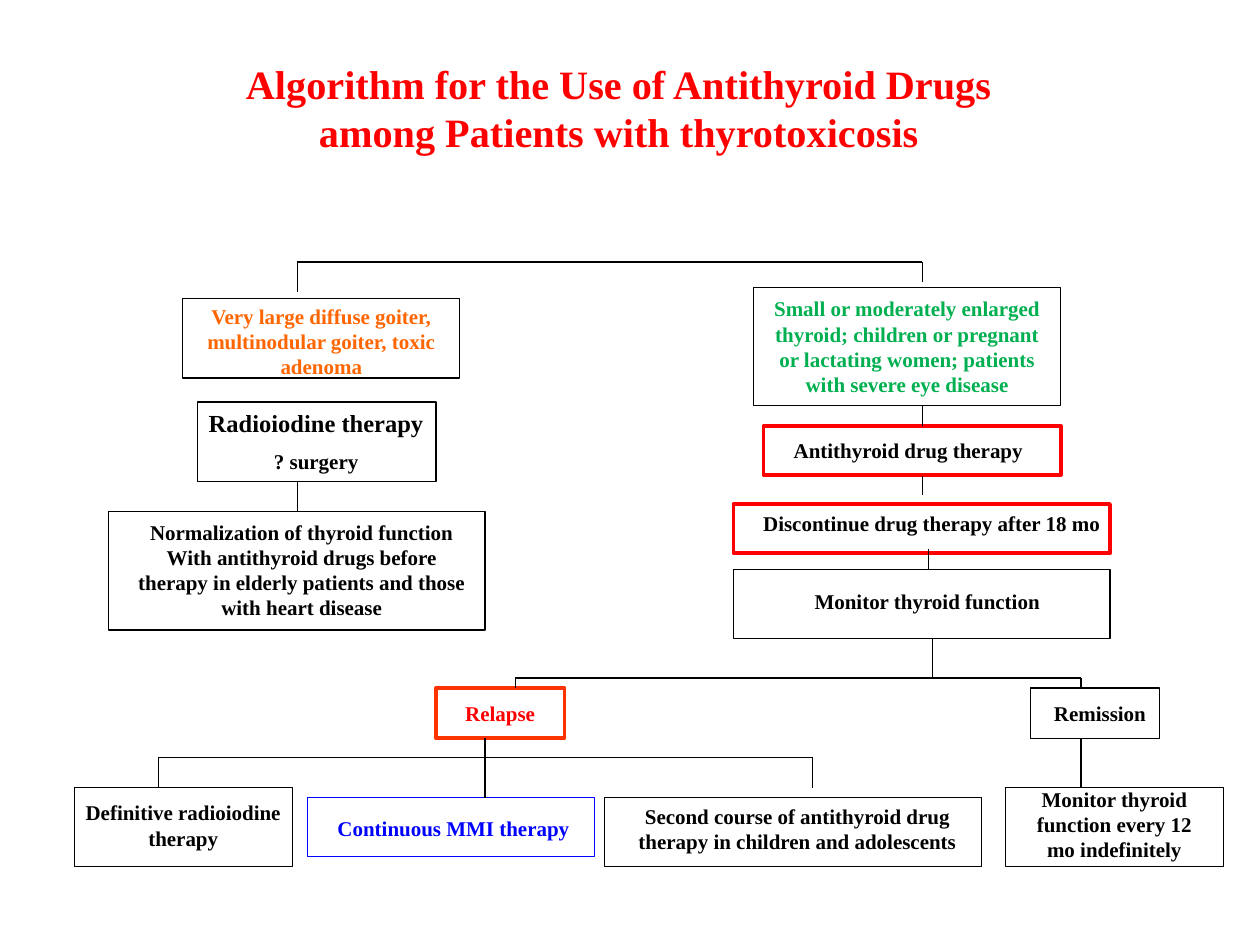
import pptx
import pptx.dml.color
import pptx.enum.shapes
import pptx.enum.text
import pptx.oxml.ns
import pptx.util
from lxml import etree

Inches = pptx.util.Inches
RGBColor = pptx.dml.color.RGBColor

FONT = "Times New Roman"
BLACK = RGBColor(0x00, 0x00, 0x00)
RED = RGBColor(0xFF, 0x00, 0x00)
ORANGE = RGBColor(0xFF, 0x66, 0x00)
RELAPSE_BORDER = RGBColor(0xFF, 0x33, 0x00)
GREEN = RGBColor(0x00, 0xB0, 0x50)
BLUE = RGBColor(0x00, 0x00, 0xFF)

# Connector x positions
LEFT_BRANCH = 2.36
RIGHT_BRANCH = 7.32
RELAPSE_DROP = 3.85
REMISSION_X = 8.58

# Frame (left, top, width, height), label area, label, format
STEPS = [
    ((1.45, 2.37, 2.2, 0.63), (1.44, 2.36, 2.22, 0.71),
     ["Very large diffuse goiter, multinodular goiter, toxic adenoma"],
     {"color": ORANGE}),
    ((5.98, 2.28, 2.44, 0.94), (5.98, 2.3, 2.44, 0.91),
     ["Small or moderately enlarged thyroid; children or pregnant "
      "or lactating women; patients with severe eye disease"],
     {"color": GREEN}),
    ((6.06, 3.38, 2.36, 0.39), (5.91, 3.42, 2.6, 0.3),
     ["Antithyroid drug therapy"], {"border": RED, "weight": 2}),
    ((5.82, 4, 2.99, 0.39), (5.82, 4, 3.15, 0.3),
     ["Discontinue drug therapy after 18 mo"], {"border": RED, "weight": 2}),
    ((5.82, 4.52, 2.99, 0.55), (5.98, 4.62, 2.76, 0.3),
     ["Monitor thyroid function"], {}),
    ((3.46, 5.46, 1.02, 0.4), (3.46, 5.51, 1.02, 0.3),
     ["Relapse"], {"color": RED, "border": RELAPSE_BORDER, "weight": 2}),
    ((8.18, 5.46, 1.02, 0.4), (8.22, 5.51, 1.02, 0.3), ["Remission"], {}),
    ((0.59, 6.25, 1.73, 0.63), (0.39, 6.3, 2.13, 0.5),
     ["Definitive radioiodine therapy"], {}),
    ((4.8, 6.33, 2.99, 0.55), (4.95, 6.33, 2.76, 0.5),
     ["Second course of antithyroid drug therapy in children and adolescents"], {}),
    ((7.98, 6.25, 1.73, 0.63), (8.06, 6.19, 1.57, 0.71),
     ["Monitor thyroid function every 12 mo indefinitely"], {}),
    ((2.44, 6.33, 2.28, 0.47), (2.42, 6.42, 2.36, 0.3),
     ["Continuous MMI therapy"], {"color": BLUE, "border": BLUE}),
    ((1.57, 3.19, 1.89, 0.63), (1.41, 3.19, 2.2, 0.63),
     ["Radioiodine therapy", "? surgery"], {"sizes": (14, 12), "gap": 6}),
    ((0.86, 4.06, 2.99, 0.94), (0.94, 4.07, 2.91, 0.91),
     ["Normalization of thyroid function",
      "With antithyroid drugs before therapy in elderly patients "
      "and those with heart disease"], {}),
]

# Horizontal bars: y, left x, right x
BARS = [
    (2.08, LEFT_BRANCH, RIGHT_BRANCH),
    (5.38, 4.09, REMISSION_X),
    (6.01, 1.26, 6.45),
]

# Vertical links: x, top y, bottom y
LINKS = [
    (LEFT_BRANCH, 2.08, 2.32),
    (RIGHT_BRANCH, 2.08, 2.24),
    (LEFT_BRANCH, 3.82, 4.06),
    (RIGHT_BRANCH, 3.22, 3.38),
    (RIGHT_BRANCH, 3.78, 3.93),
    (7.37, 4.36, 4.52),
    (7.4, 5.07, 5.38),
    (4.09, 5.38, 5.46),
    (REMISSION_X, 5.38, 5.46),
    (REMISSION_X, 5.86, 6.25),
    (RELAPSE_DROP, 5.86, 6.33),
    (1.26, 6.01, 6.25),
    (6.45, 6.01, 6.25),
]


def write_text(frame, paragraphs, *, sizes=(12,), color=BLACK, gap=0):
    """Fill a frame with centred bold paragraphs; the last size serves the rest."""
    frame.vertical_anchor = pptx.enum.text.MSO_ANCHOR.TOP
    for index, text in enumerate(paragraphs):
        paragraph = frame.add_paragraph() if index else frame.paragraphs[0]
        paragraph.alignment = pptx.enum.text.PP_ALIGN.CENTER
        paragraph.space_before = pptx.util.Pt(gap if index else 0)
        run = paragraph.add_run()
        run.text = text
        run.font.name = FONT
        run.font.size = pptx.util.Pt(sizes[min(index, len(sizes) - 1)])
        run.font.bold = True
        run.font.color.rgb = color


def add_title(slide, paragraphs):
    title = slide.shapes.title
    title.left, title.top, title.width, title.height = map(
        Inches, (1.83, 0.42, 6.17, 0.88))
    title.text_frame.word_wrap = False
    title.text_frame.auto_size = pptx.enum.text.MSO_AUTO_SIZE.NONE
    write_text(title.text_frame, paragraphs, sizes=(23,), color=RED)


def add_frame(slide, area, border, weight):
    shape = slide.shapes.add_shape(
        pptx.enum.shapes.MSO_SHAPE.RECTANGLE, *map(Inches, area))
    shape.shadow.inherit = False
    shape.fill.background()
    shape.line.color.rgb = border
    shape.line.width = pptx.util.Pt(weight)


def add_step(slide, frame_area, label_area, paragraphs, *,
             border=BLACK, weight=0.75, **text_format):
    add_frame(slide, frame_area, border, weight)
    label = slide.shapes.add_textbox(*map(Inches, label_area))
    label.text_frame.word_wrap = True
    write_text(label.text_frame, paragraphs, **text_format)


def add_line(slide, x1, y1, x2, y2):
    line = slide.shapes.add_connector(
        pptx.enum.shapes.MSO_CONNECTOR.STRAIGHT, *map(Inches, (x1, y1, x2, y2)))
    line.line.color.rgb = BLACK
    line.line.width = pptx.util.Pt(0.75)
    etree.SubElement(line._element.spPr, pptx.oxml.ns.qn("a:effectLst"))


def main():
    presentation = pptx.Presentation()
    presentation.slide_width = Inches(10)
    presentation.slide_height = Inches(7.5)
    slide = presentation.slides.add_slide(
        presentation.slide_layouts.get_by_name("Title Only"))

    add_title(slide, ["Algorithm for the Use of Antithyroid Drugs",
                      "among Patients with thyrotoxicosis"])
    for frame_area, label_area, paragraphs, options in STEPS:
        add_step(slide, frame_area, label_area, paragraphs, **options)
    for y, left, right in BARS:
        add_line(slide, left, y, right, y)
    for x, top, bottom in LINKS:
        add_line(slide, x, top, x, bottom)

    presentation.save("out.pptx")


if __name__ == "__main__":
    main()
